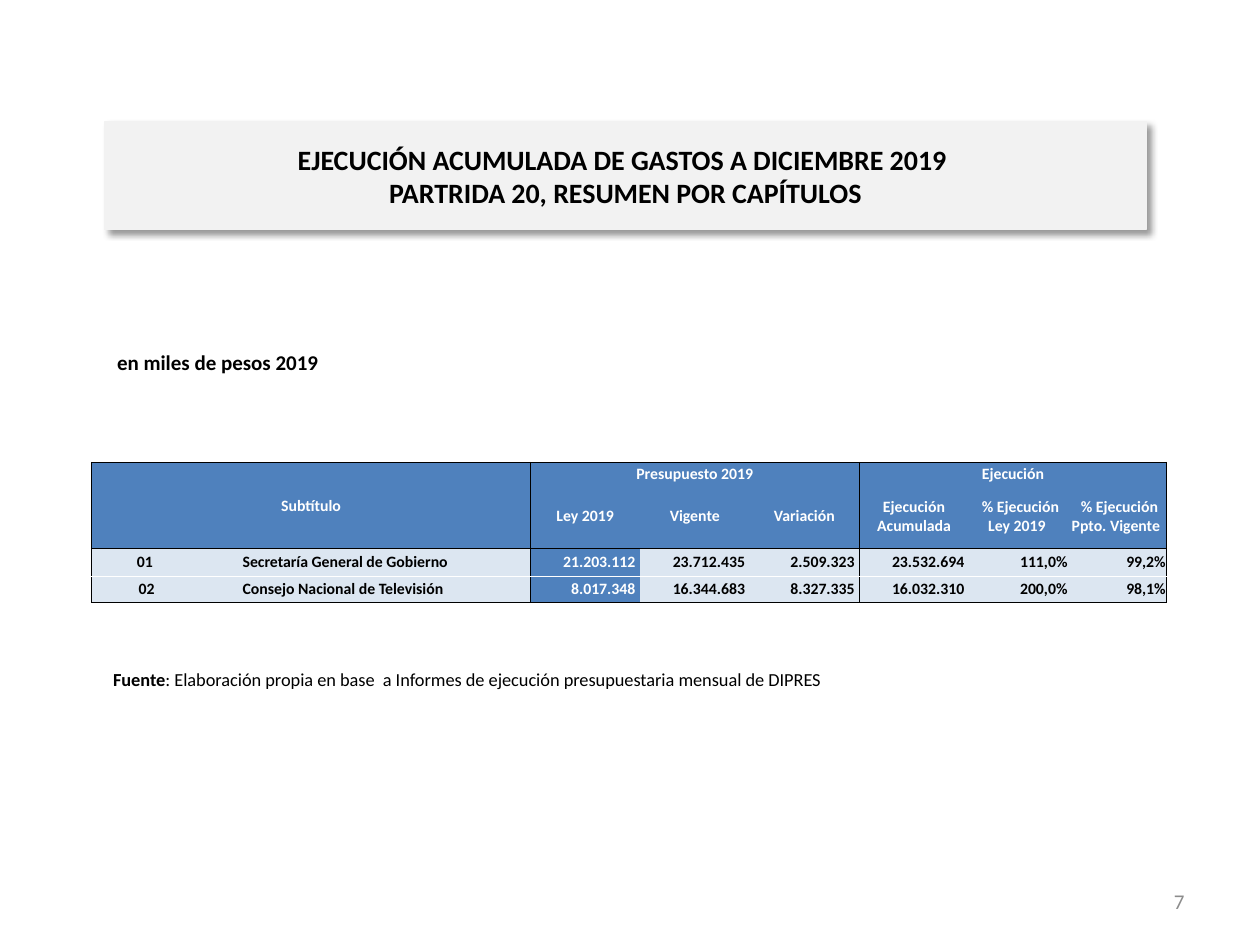
import pptx
import pptx.util
import pptx.dml.color
import pptx.enum.text
import pptx.oxml
import pptx.oxml.ns

Cm = pptx.util.Cm
ALIGN = pptx.enum.text.PP_ALIGN
ANCHOR = pptx.enum.text.MSO_ANCHOR
NS = pptx.oxml.ns.nsdecls("a")


def colour(hex_code):
    return pptx.dml.color.RGBColor.from_string(hex_code)


def write(paragraph, text, size=9, color="000000", bold=False, align=ALIGN.LEFT):
    paragraph.alignment = align
    for index, line in enumerate(text.split("\n")):
        if index:
            paragraph.add_line_break()
        if line:
            run = paragraph.add_run()
            run.text = line
            run.font.name = "Calibri"
            run.font.size = pptx.util.Pt(size)
            run.font.bold = bold
            run.font.color.rgb = colour(color)
    if not text:
        paragraph._p.get_or_add_endParaRPr().set("sz", str(size * 100))


deck = pptx.Presentation()
deck.slide_width, deck.slide_height = Cm(25.4), Cm(19.05)
slide = deck.slides.add_slide(deck.slide_layouts[5])

heading = slide.shapes.title
heading.left, heading.top, heading.width, heading.height = Cm(2.11), Cm(2.46), Cm(21), Cm(2.16)
heading.fill.solid()
heading.fill.fore_color.rgb = colour("F2F2F2")
heading.line.color.rgb = colour("F2F2F2")
heading.line.width = pptx.util.Pt(0.75)
heading._element.spPr.append(pptx.oxml.parse_xml(
    f'<a:effectLst {NS}><a:outerShdw blurRad="50800" dist="38100" dir="2700000" algn="tl" rotWithShape="0">'
    '<a:srgbClr val="000000"><a:alpha val="40000"/></a:srgbClr></a:outerShdw></a:effectLst>'))
heading.text_frame.auto_size = pptx.enum.text.MSO_AUTO_SIZE.NONE
heading.text_frame.vertical_anchor = ANCHOR.MIDDLE
write(heading.text_frame.paragraphs[0],
      "EJECUCIÓN ACUMULADA DE GASTOS A DICIEMBRE 2019 \nPARTRIDA 20, RESUMEN POR CAPÍTULOS",
      size=16, bold=True, align=ALIGN.CENTER)

notes = [
    ((18.21, 17.65, 5.92, 1.02), ANCHOR.MIDDLE,
     [("7", dict(size=12, color="8C8C8C", align=ALIGN.RIGHT))]),
    ((2.03, 13.34, 20.96, 1.02), ANCHOR.TOP,
     [("Fuente", dict(size=10.5, bold=True)),
      (": Elaboración propia en base  a Informes de ejecución presupuestaria mensual de DIPRES",
       dict(size=10.5))]),
    ((2.11, 6.93, 20.6, 0.79), ANCHOR.TOP,
     [("en miles de pesos 2019", dict(size=12, bold=True))]),
]
for place, anchor, pieces in notes:
    frame = slide.shapes.add_textbox(*map(Cm, place)).text_frame
    frame.word_wrap = True
    frame.vertical_anchor = anchor
    for text, style in pieces:
        write(frame.paragraphs[0], text, **style)

rows = [
    ["Subtítulo", "", "", "Presupuesto 2019", "", "", "Ejecución", "", ""],
    ["", "", "", "Ley 2019", "Vigente", "Variación", "Ejecución Acumulada",
     " % Ejecución Ley 2019 ", " % Ejecución Ppto. Vigente "],
    ["01 ", "", "Secretaría General de Gobierno", "21.203.112 ", "23.712.435 ", "2.509.323 ",
     "23.532.694 ", "111,0%", "99,2%"],
    ["02", "", "Consejo Nacional de Televisión", "8.017.348 ", "16.344.683 ", "8.327.335 ",
     "16.032.310 ", "200,0%", "98,1%"],
]
widths = [2.21, 0.81, 5.82, 2.21, 2.21, 2.21, 2.21, 2.01, 1.98]
heights = [0.43, 1.3, 0.56, 0.53]
budget = slide.shapes.add_table(len(rows), len(widths), Cm(1.85), Cm(9.32),
                                Cm(sum(widths)), Cm(sum(heights))).table
budget.first_row = budget.horz_banding = False
for column, width in zip(budget.columns, widths):
    column.width = Cm(width)
for row, height in zip(budget.rows, heights):
    row.height = Cm(height)
for first, last in [((0, 0), (1, 2)), ((0, 3), (0, 5)), ((0, 6), (0, 8))]:
    budget.cell(*first).merge(budget.cell(*last))

column_edges = dict.fromkeys((0, 3, 6, 9), "000000")
row_edges = {0: "000000", 2: "000000", 3: "FFFFFF", 4: "000000"}
data_align = [ALIGN.CENTER, ALIGN.LEFT, ALIGN.JUSTIFY] + [ALIGN.RIGHT] * 6

for r, texts in enumerate(rows):
    for c, text in enumerate(texts):
        cell = budget.cell(r, c)
        header = r < 2
        dark = header or c == 3
        cell.margin_left = cell.margin_right = cell.margin_top = Cm(0.02)
        cell.margin_bottom = 0
        cell.vertical_anchor = ANCHOR.BOTTOM if r == 0 and c >= 3 else ANCHOR.MIDDLE
        write(cell.text_frame.paragraphs[0], text, bold=True,
              color="FFFFFF" if dark else "000000",
              align=ALIGN.CENTER if header else data_align[c])
        cell.fill.solid()
        cell.fill.fore_color.rgb = colour("4F81BD" if dark else "DCE6F1")
        right = c + (cell.span_width if cell.is_merge_origin else 1)
        bottom = r + (cell.span_height if cell.is_merge_origin else 1)
        edges = [("L", column_edges.get(c)), ("R", column_edges.get(right)),
                 ("T", row_edges.get(r)), ("B", row_edges.get(bottom))]
        for position, (side, edge) in enumerate(edges):
            paint = f'<a:solidFill><a:srgbClr val="{edge}"/></a:solidFill>' if edge else "<a:noFill/>"
            cell._tc.tcPr.insert(position, pptx.oxml.parse_xml(
                f'<a:ln{side} {NS} w="6350">{paint}</a:ln{side}>'))

deck.save("out.pptx")
